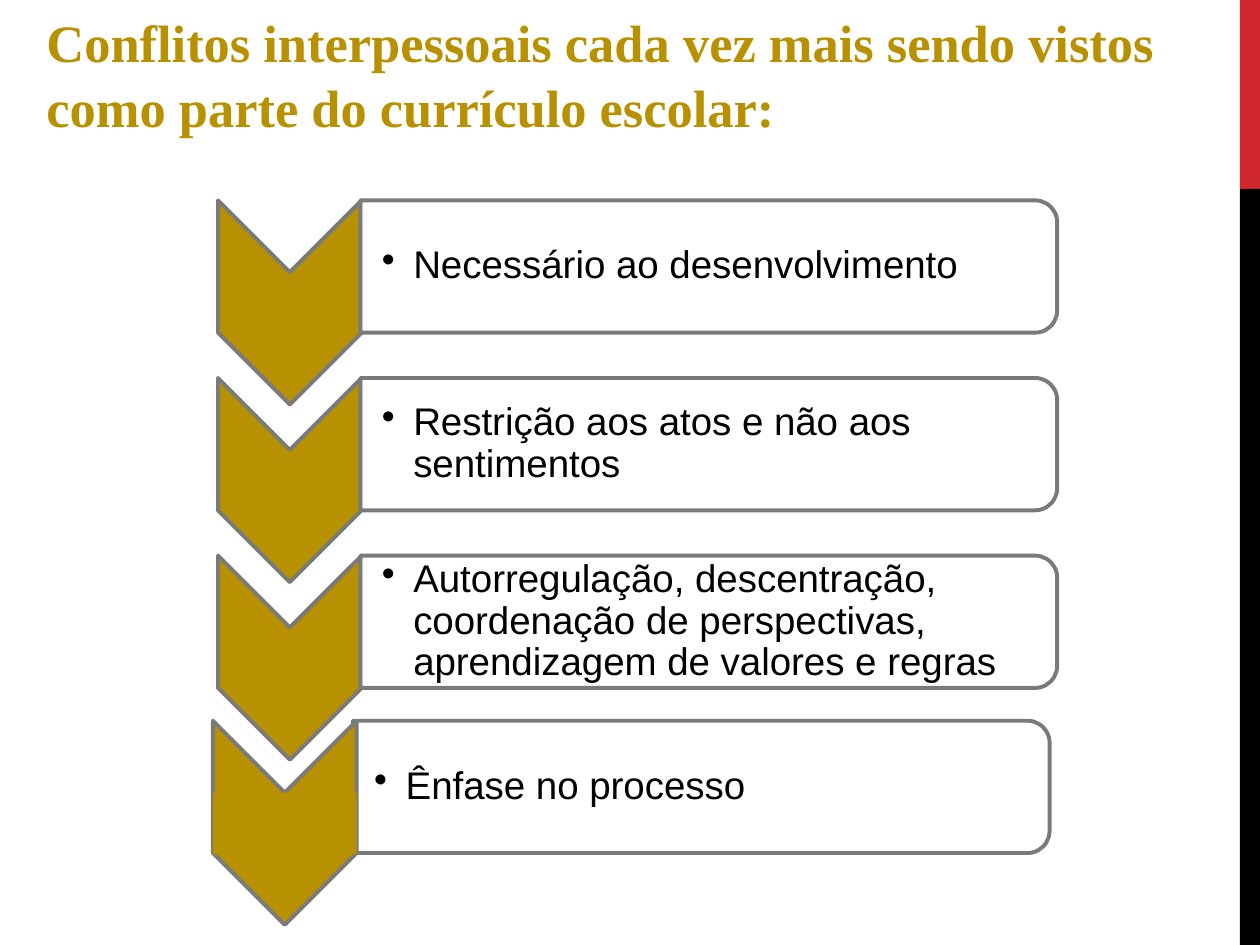
from lxml import etree
from pptx import Presentation
from pptx.dml.color import RGBColor
from pptx.enum.shapes import MSO_SHAPE
from pptx.enum.text import MSO_ANCHOR
from pptx.oxml.ns import qn
from pptx.util import Inches, Pt

RECT = MSO_SHAPE.RECTANGLE
CHEVRON = MSO_SHAPE.CHEVRON
ROUND = MSO_SHAPE.ROUND_2_SAME_RECTANGLE
TOP, MIDDLE = MSO_ANCHOR.TOP, MSO_ANCHOR.MIDDLE

COLORS = {"gold": "B89101", "gray": "7A7A7A", "white": "FFFFFF",
          "black": "000000", "red": "D1282E"}

ITEMS = [
    "Necessário ao desenvolvimento",
    "Restrição aos atos e não aos sentimentos",
    "Autorregulação, descentração, coordenação de perspectivas, "
    "aprendizagem de valores e regras",
]
LAST = "Ênfase no processo"
PITCH = 1.41
ARROW_W, ARROW_H = 1.14, 1.62
PANEL_W, PANEL_H = 5.53, 1.05


def rgb(name):
    return RGBColor.from_string(COLORS[name])


def add_shape(slide, kind, box, fill, line=None, turn=False, alpha=None):
    """Draw a shape in its visible box; turn rotates it by 90 degrees."""
    left, top, width, height = box
    if turn:
        left += (width - height) / 2
        top += (height - width) / 2
        width, height = height, width
    shape = slide.shapes.add_shape(
        kind, Inches(left), Inches(top), Inches(width), Inches(height))
    shape.rotation = 90 if turn else 0
    shape.shadow.inherit = False
    shape.fill.solid()
    shape.fill.fore_color.rgb = rgb(fill)
    if alpha:
        color = shape.fill._xPr.find(qn("a:solidFill"))[0]
        etree.SubElement(color, qn("a:alpha")).set("val", str(alpha * 1000))
    if line:
        shape.line.color.rgb = rgb(line)
        shape.line.width = Pt(2.25)
    else:
        shape.line.fill.background()


def add_text(slide, text, box, size, font, color, bold=False, anchor=TOP,
             insets=(0.1, 0.05, 0.1, 0.05), spacing=1.0, bullet=None):
    frame = slide.shapes.add_textbox(*map(Inches, box)).text_frame
    frame.word_wrap = True
    frame.vertical_anchor = anchor
    (frame.margin_left, frame.margin_top,
     frame.margin_right, frame.margin_bottom) = map(Inches, insets)
    para = frame.paragraphs[0]
    para.line_spacing = spacing
    run = para.add_run()
    run.text = text
    run.font.size = Pt(size)
    run.font.name = font
    run.font.bold = bold
    run.font.color.rgb = rgb(color)
    if bullet:
        props = para._p.get_or_add_pPr()
        props.set("marL", str(Inches(0.25)))
        props.set("indent", str(Inches(-0.25)))
        etree.SubElement(props, qn("a:buChar")).set("char", bullet)


def add_arrow(slide, left, top):
    add_shape(slide, CHEVRON, (left, top, ARROW_W, ARROW_H),
              "gold", line="gray", turn=True)


def add_panel(slide, text, left, top):
    add_shape(slide, ROUND, (left, top, PANEL_W, PANEL_H),
              "white", line="gray", turn=True, alpha=90)
    add_text(slide, text, (left, top + 0.05, 5.48, 0.95), 22, "Arial",
             "black", anchor=MIDDLE, insets=(0.17, 0.02, 0.02, 0.02),
             spacing=0.9, bullet="•")


def add_list(slide, left, top):
    for i, text in enumerate(ITEMS):
        y = top + i * PITCH
        add_arrow(slide, left, y)
        add_panel(slide, text, left + ARROW_W - 0.01, y)


def add_end(slide, left, top):
    """Closing row, whose arrow lies over the panel."""
    add_panel(slide, LAST, left + 1.11, top)
    add_arrow(slide, left, top)
    add_shape(slide, RECT, (left, top + 0.57, ARROW_W, 0.49), "gold")


def add_edge(slide, left, width):
    add_shape(slide, RECT, (left, 0, width, 1.5), "red")
    add_shape(slide, RECT, (left, 1.5, width, 6), "black")


def main():
    deck = Presentation()
    deck.slide_width, deck.slide_height = Inches(10), Inches(7.5)
    slide = deck.slides.add_slide(deck.slide_layouts[6])
    add_edge(slide, 9.84, 0.16)
    add_list(slide, 1.73, 1.59)
    add_end(slide, 1.69, 5.72)
    # Title
    add_text(slide, "Conflitos interpessoais cada vez mais sendo vistos "
             "como parte do currículo escolar:", (0.27, 0.01, 9.3, 1.5),
             30, "Times New Roman", "gold", bold=True, spacing=1.04)
    deck.save("out.pptx")


if __name__ == "__main__":
    main()
